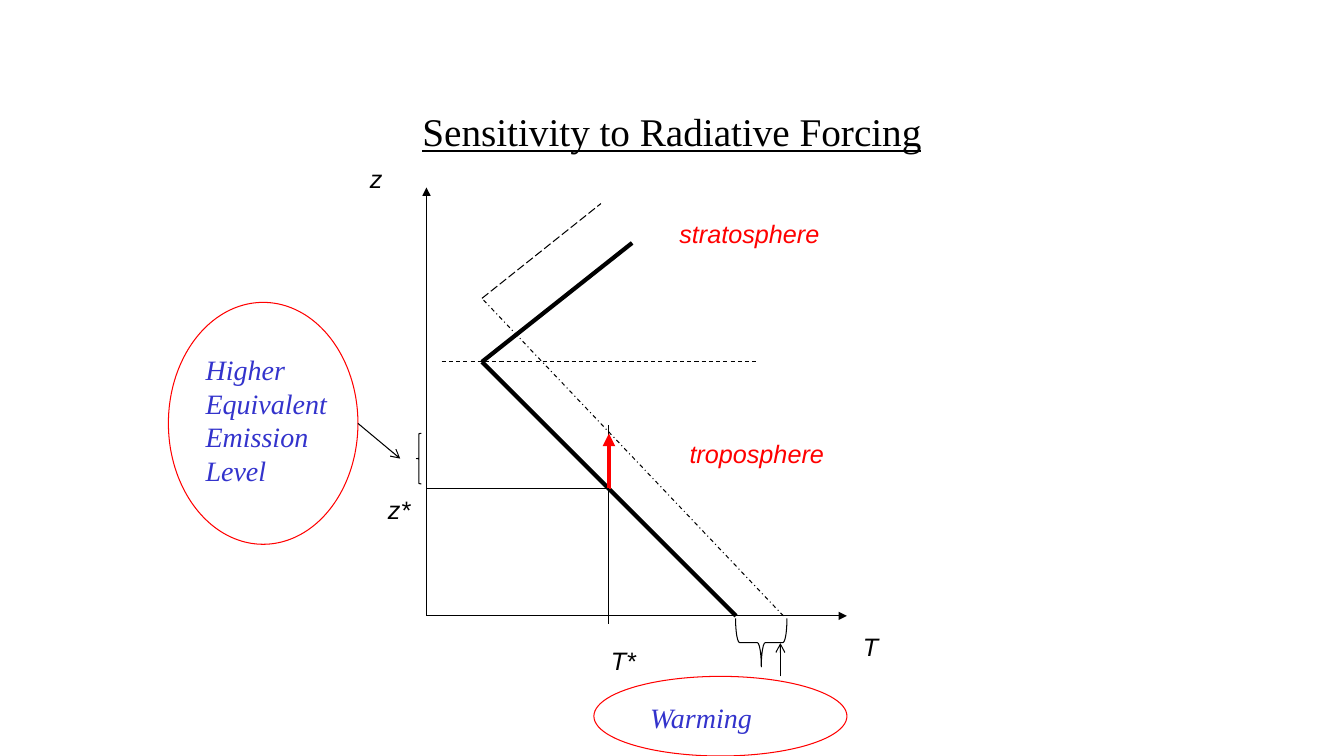
from pptx import Presentation
from pptx.dml.color import RGBColor
from pptx.enum.dml import MSO_LINE_DASH_STYLE as Dash
from pptx.enum.shapes import MSO_CONNECTOR, MSO_SHAPE as Shape
from pptx.enum.text import MSO_ANCHOR, MSO_AUTO_SIZE, PP_ALIGN
from pptx.oxml.ns import qn
from pptx.util import Inches, Pt
from lxml import etree

BLACK, RED, BLUE = "000000", "FF0000", "3333CC"
SANS, SERIF = "Arial", "Times New Roman"
THIN, THICK = 0.75, 3


def color(value):
    return RGBColor.from_string(value)


class DiagramSlide:
    def __init__(self, presentation):
        self.slide = presentation.slides.add_slide(presentation.slide_layouts[6])
        self.shapes = self.slide.shapes

    def text(self, box, lines, size=18, font=SANS, ink=BLACK, wrap=False):
        """Add a text box with one paragraph per line, in italics."""
        shape = self.shapes.add_textbox(*map(Inches, box))
        frame = shape.text_frame
        frame.text = lines
        frame.word_wrap = wrap
        frame.auto_size = MSO_AUTO_SIZE.SHAPE_TO_FIT_TEXT
        for paragraph in frame.paragraphs:
            for run in paragraph.runs:
                run.font.size = Pt(size)
                run.font.name = font
                run.font.italic = True
                run.font.color.rgb = color(ink)
        return frame

    def title(self, box, wording):
        frame = self.text(box, wording, 28, SERIF, wrap=True)
        frame.auto_size = MSO_AUTO_SIZE.NONE
        frame.vertical_anchor = MSO_ANCHOR.MIDDLE
        paragraph = frame.paragraphs[0]
        paragraph.alignment = PP_ALIGN.CENTER
        paragraph.runs[0].font.italic = False
        paragraph.runs[0].font.underline = True

    def line(self, start, end, width=THIN, ink=BLACK, dash=None, head=None):
        """Draw a straight line, with an arrowhead at its end if one is named."""
        points = map(Inches, (*start, *end))
        connector = self.shapes.add_connector(MSO_CONNECTOR.STRAIGHT, *points)
        connector.line.color.rgb = color(ink)
        connector.line.width = Pt(width)
        if dash:
            connector.line.dash_style = dash
        if head:
            outline = connector.line._get_or_add_ln()
            etree.SubElement(outline, qn("a:tailEnd"), type=head)
        etree.SubElement(connector._element.spPr, qn("a:effectLst"))

    def outline(self, preset, box, ink=BLACK, rotation=0):
        """Add an unfilled preset shape."""
        shape = self.shapes.add_shape(preset, *map(Inches, box))
        shape.shadow.inherit = False
        shape.fill.background()
        shape.line.color.rgb = color(ink)
        shape.line.width = Pt(THIN)
        shape.rotation = rotation


def main():
    presentation = Presentation()
    presentation.slide_width = Inches(13.33)
    presentation.slide_height = Inches(7.5)
    diagram = DiagramSlide(presentation)
    diagram.title((1, 0.67, 11.33, 1.25), "Sensitivity to Radiative Forcing")

    # Temperature profile and axes
    origin, tropopause, emission = (4.23, 6.11), (4.78, 3.59), (6.04, 4.85)
    diagram.line((7.3, 6.11), tropopause, THICK)
    diagram.line(tropopause, (6.27, 2.41), THICK)
    diagram.line(origin, (4.23, 1.86), head="triangle")
    diagram.line(origin, (8.4, 6.11), head="triangle")
    diagram.line((4.38, 3.59), (7.53, 3.59), dash=Dash.DASH)

    # Warmed profile
    warmed_tropopause = (4.78, 2.96)
    diagram.line((7.77, 6.11), warmed_tropopause, dash=Dash.DASH_DOT)
    diagram.line(warmed_tropopause, (5.96, 2.02), dash=Dash.LONG_DASH)

    # Emission level and its rise
    diagram.line((6.04, 4.22), (6.04, 6.19))
    diagram.line(emission, (6.04, 4.3), THICK, RED, head="triangle")
    diagram.line(emission, (4.23, 4.85))

    for wording, left, top, width, ink in (
        ("z", 3.57, 1.57, 0.33, BLACK),
        ("T", 8.46, 6.21, 0.35, BLACK),
        ("T*", 5.96, 6.35, 0.45, BLACK),
        ("z*", 3.75, 4.85, 0.43, BLACK),
        ("stratosphere", 6.64, 2.12, 1.6, RED),
        ("troposphere", 6.74, 4.3, 1.55, RED),
    ):
        diagram.text((left, top, width, 0.4), wording, ink=ink)

    # Callouts
    diagram.outline(Shape.LEFT_BRACE, (4.13, 4.3, 0.05, 0.5))
    diagram.text((1.94, 3.45, 1.41, 1.45), "Higher\nEquivalent\nEmission\nLevel",
                 20, SERIF, BLUE)
    diagram.outline(Shape.OVAL, (1.67, 3, 1.88, 2.4), RED)
    diagram.line((3.55, 4.2), (3.97, 4.55), head="arrow")

    diagram.outline(Shape.RIGHT_BRACE, (7.31, 6.12, 0.48, 0.51), rotation=90)
    diagram.text((6.35, 6.9, 5, 0.44), "Warming", 20, SERIF, BLUE, wrap=True)
    diagram.outline(Shape.OVAL, (5.89, 6.71, 2.51, 0.79), RED)
    diagram.line((7.74, 6.71), (7.74, 6.38), head="arrow")

    presentation.save("out.pptx")


if __name__ == "__main__":
    main()
